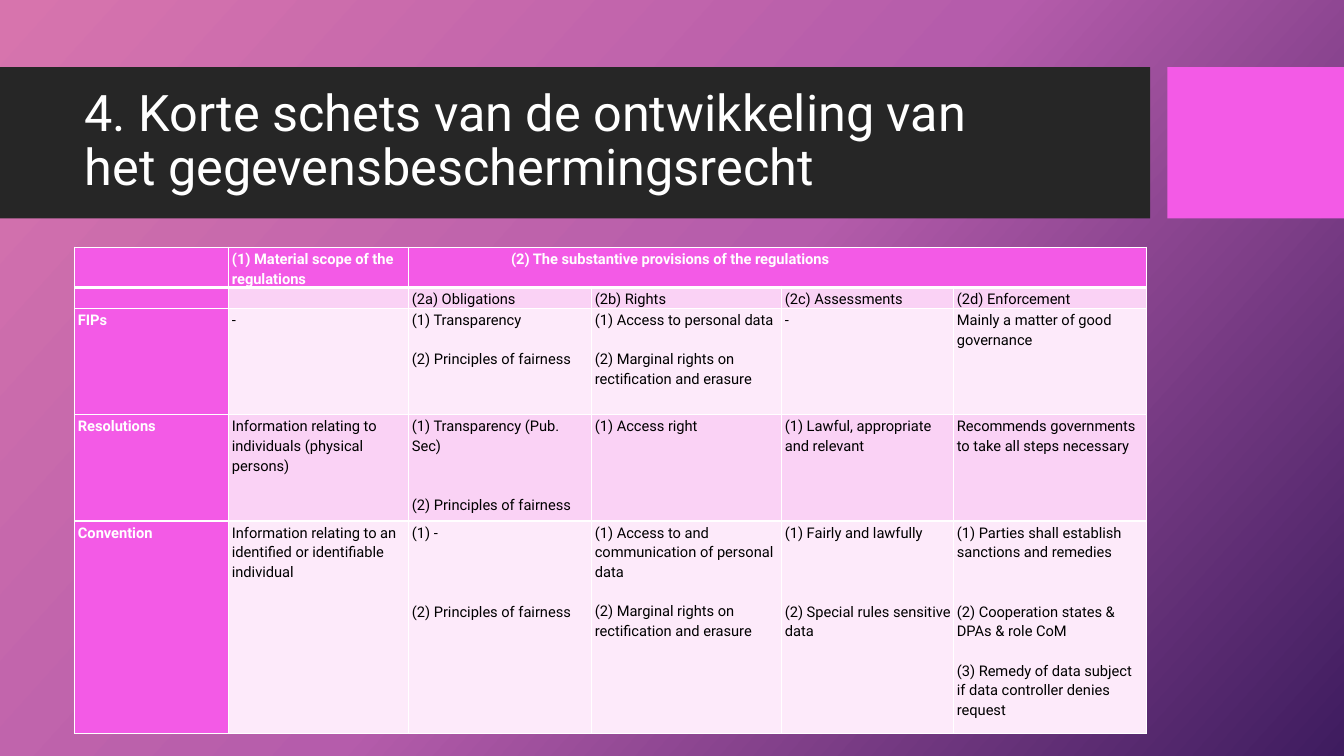
import copy
import pptx
import pptx.util
import pptx.dml.color
import pptx.enum.shapes
import pptx.enum.text
import pptx.oxml
import pptx.oxml.ns
import lxml.etree

Pt = pptx.util.Pt
RGBColor = pptx.dml.color.RGBColor
qn = pptx.oxml.ns.qn

WHITE = RGBColor(0xFF, 0xFF, 0xFF)
BLACK = RGBColor(0, 0, 0)
DARK = RGBColor(0x26, 0x26, 0x26)
PINK = RGBColor(0xF3, 0x5A, 0xE6)
LIGHT = RGBColor(0xFA, 0xD2, 0xF5)
PALE = RGBColor(0xFD, 0xEA, 0xFA)
ROSE = RGBColor(0xD7, 0x74, 0xAD)
MAUVE = RGBColor(0xB5, 0x5C, 0xAB)
PLUM = RGBColor(0x3E, 0x1C, 0x5F)
FONT = "Roboto"
LINE = 14.1  # height of one line of table text


def add_run(para, text, size, color, bold=False):
    run = para.add_run()
    run.text = text
    run.font.name = FONT
    run.font.size = Pt(size)
    run.font.bold = bold
    run.font.color.rgb = color


def add_edge(cell, side, width):
    edge = lxml.etree.SubElement(cell._tc.get_or_add_tcPr(), qn("a:" + side), w=str(Pt(width)))
    fill = lxml.etree.SubElement(edge, qn("a:solidFill"))
    lxml.etree.SubElement(fill, qn("a:srgbClr"), val=str(WHITE))


deck = pptx.Presentation()
deck.slide_width = Pt(960)
deck.slide_height = Pt(540)
slide = deck.slides.add_slide(deck.slide_layouts[5])

# Background gradient with three stops
back = slide.background.fill
back.gradient()
back.gradient_angle = 318
stops = slide.element.find(".//" + qn("a:gsLst"))
stops.insert(1, copy.deepcopy(stops[0]))
for stop, place, color in zip(back.gradient_stops, (0, 0.5, 1), (ROSE, MAUVE, PLUM)):
    stop.position = place
    stop.color.rgb = color

# Title band and accent block
for left, width, color in ((0, 821.5, DARK), (833.8, 126.2, PINK)):
    band = slide.shapes.add_shape(
        pptx.enum.shapes.MSO_SHAPE.RECTANGLE, Pt(left), Pt(48), Pt(width), Pt(108))
    band.shadow.inherit = False
    band.fill.solid()
    band.fill.fore_color.rgb = color
    band.line.fill.background()

# Title, brought in front of the band
title = slide.shapes.title
slide.shapes.element.append(title.element)
title.left, title.top, title.width, title.height = Pt(53.3), Pt(59), Pt(756.7), Pt(85)
frame = title.text_frame
frame.word_wrap = True
frame.auto_size = pptx.enum.text.MSO_AUTO_SIZE.NONE
frame.vertical_anchor = pptx.enum.text.MSO_ANCHOR.MIDDLE
para = frame.paragraphs[0]
para.alignment = pptx.enum.text.PP_ALIGN.LEFT
para.line_spacing = 0.9
add_run(para, "4. Korte schets van de ontwikkeling van", 36, WHITE)
para.add_line_break()
add_run(para, "het gegevensbeschermingsrecht", 36, WHITE)

# Table text: a number is the count of lines left open before the next paragraph
FAIR = "(2) Principles of fairness"
MARGINAL = "(2) Marginal rights on rectification and erasure"
rows = [
    [[], ["(1) Material scope of the regulations"],
     ["(2) The substantive provisions of the regulations"], [], [], []],
    [[], [], ["(2a) Obligations"], ["(2b) Rights"], ["(2c) Assessments"], ["(2d) Enforcement"]],
    [["FIPs"], ["-"], ["(1) Transparency", 1, FAIR],
     ["(1) Access to personal data", 1, MARGINAL], ["-"],
     ["Mainly a matter of good governance"]],
    [["Resolutions"], ["Information relating to individuals (physical persons)"],
     ["(1) Transparency (Pub. Sec)", 2, FAIR], ["(1) Access right"],
     ["(1) Lawful, appropriate and relevant"],
     ["Recommends governments to take all steps necessary"]],
    [["Convention"], ["Information relating to an identified or identifiable individual"],
     ["(1) -", 3, FAIR],
     ["(1) Access to and communication of personal data", 1, MARGINAL],
     ["(1) Fairly and lawfully", 3, "(2) Special rules sensitive data"],
     ["(1) Parties shall establish sanctions and remedies", 2,
      "(2) Cooperation states & DPAs & role CoM", 1,
      "(3) Remedy of data subject if data controller denies request"]],
]
widths = [110, 128.6, 130.7, 135.7, 122.9, 137.9]
heights = [28, 14.4, 76, 76, 152]

# Table grid
grid = slide.shapes.add_table(
    len(rows), len(widths), Pt(53.5), Pt(176.6), Pt(sum(widths)), Pt(sum(heights))).table
grid.first_row = False
grid.horz_banding = False
for col, width in zip(grid.columns, widths):
    col.width = Pt(width)
for row, height in zip(grid.rows, heights):
    row.height = Pt(height)
grid.cell(0, 2).merge(grid.cell(0, 5))

# Cells
for r, row in enumerate(rows):
    for c, parts in enumerate(row):
        cell = grid.cell(r, c)
        head = r == 0 or c == 0
        for side in ("lnL", "lnR", "lnT", "lnB"):
            thick = (r, side) in ((0, "lnB"), (1, "lnT"))
            add_edge(cell, side, 3 if thick else 1)
        cell.fill.solid()
        cell.fill.fore_color.rgb = PINK if head else (PALE, LIGHT)[r % 2]
        cell.margin_left = Pt(73 if (r, c) == (0, 2) else 2.2)
        cell.margin_right = Pt(2.2)
        cell.margin_top = Pt(0.7)
        cell.margin_bottom = 0
        para = cell.text_frame.paragraphs[0]
        para.line_spacing = 1.15
        if not parts:
            lxml.etree.SubElement(para._p, qn("a:endParaRPr"), sz="1050")
        for part in parts:
            if isinstance(part, int):
                para = cell.text_frame.add_paragraph()
                para.line_spacing = 1.15
                para.space_before = Pt(part * LINE)
            else:
                add_run(para, part, 10.5, WHITE if head else BLACK, head)

deck.save("out.pptx")
